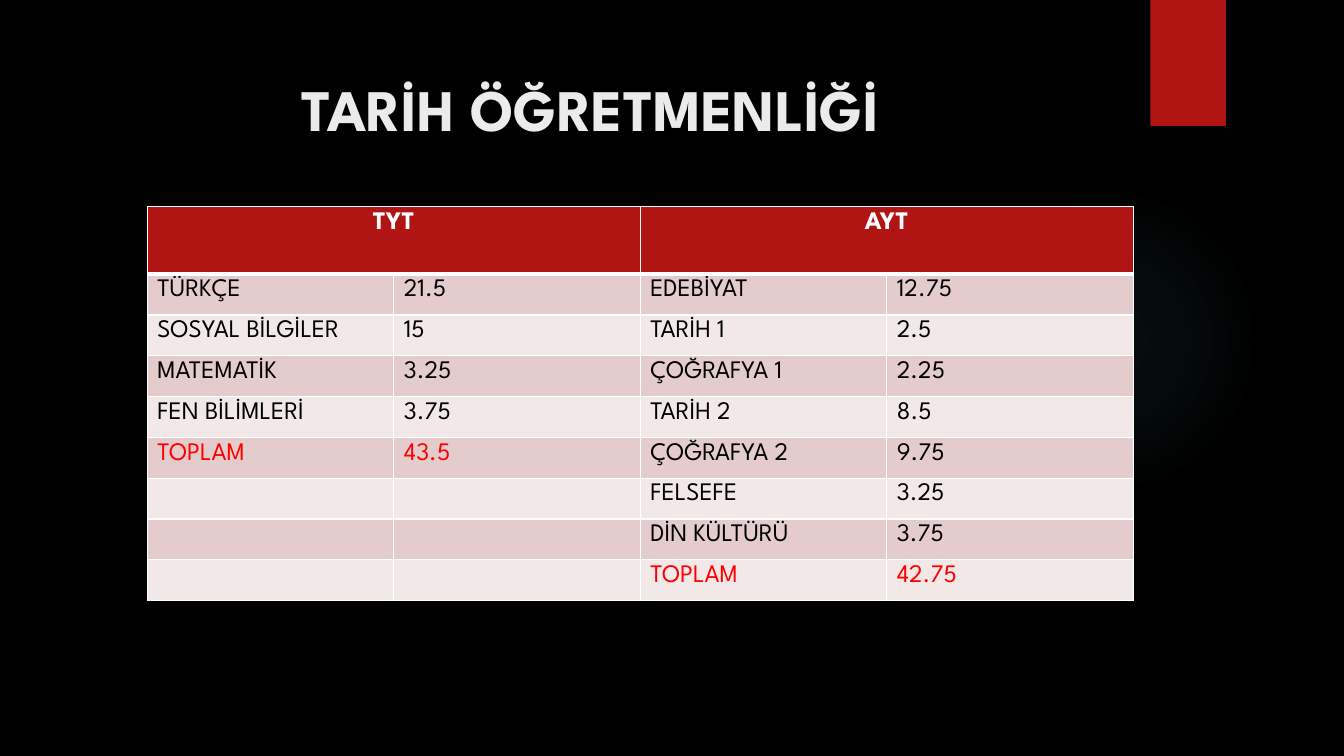
"""Build the history teaching slide with its TYT and AYT score table."""
from typing import NamedTuple

from lxml.etree import SubElement
from pptx import Presentation
from pptx.dml.color import RGBColor
from pptx.enum.shapes import MSO_SHAPE as Preset
from pptx.enum.text import MSO_ANCHOR as Anchor, PP_ALIGN as Align
from pptx.oxml import parse_xml
from pptx.oxml.ns import nsdecls, qn
from pptx.util import Inches, Pt

FONT = "League Spartan"
RED = "B01513"
BANDS = ("E4CCCC", "F2E8E7")
TABLE_HEIGHT, HEADER_HEIGHT = 3.91, 0.67


class Score(NamedTuple):
    subject: str
    net: str


class Exam(NamedTuple):
    name: str
    scores: list[Score]


EXAMS = [
    Exam("TYT", [
        Score("TÜRKÇE", "21.5"), Score("SOSYAL BİLGİLER", "15"),
        Score("MATEMATİK", "3.25"), Score("FEN BİLİMLERİ", "3.75"),
        Score("TOPLAM", "43.5"),
    ]),
    Exam("AYT", [
        Score("EDEBİYAT", "12.75"), Score("TARİH 1", "2.5"),
        Score("ÇOĞRAFYA 1", "2.25"), Score("TARİH 2", "8.5"),
        Score("ÇOĞRAFYA 2", "9.75"), Score("FELSEFE", "3.25"),
        Score("DİN KÜLTÜRÜ", "3.75"), Score("TOPLAM", "42.75"),
    ]),
]


def paint(fill, color: str) -> None:
    fill.solid()
    fill.fore_color.rgb = RGBColor.from_string(color)


def write(frame, text: str, size: int, color: str, bold=False, align=Align.LEFT) -> None:
    frame.text = text
    para = frame.paragraphs[0]
    para.alignment = align
    for span in para.runs:
        span.font.name = FONT
        span.font.size = Pt(size)
        span.font.bold = bold
        span.font.color.rgb = RGBColor.from_string(color)


def add_shape(page, preset, left: float, top: float, width: float, height: float):
    shape = page.shapes.add_shape(
        preset, Inches(left), Inches(top), Inches(width), Inches(height))
    shape.shadow.inherit = False
    shape.line.fill.background()
    return shape


def add_glow(page) -> None:
    glow = add_shape(page, Preset.OVAL, 9.41, 1.83, 3.08, 3.08)
    stops = "".join(
        f'<a:gs pos="{place * 1000}"><a:srgbClr val="50B9C1">'
        f'<a:alpha val="{alpha * 1000}"/></a:srgbClr></a:gs>'
        for place, alpha in ((0, 7), (36, 6), (69, 0)))
    gradient = parse_xml(
        f'<a:gradFill {nsdecls("a")}><a:gsLst>{stops}</a:gsLst><a:path path="circle">'
        '<a:fillToRect l="50000" t="50000" r="50000" b="50000"/></a:path></a:gradFill>')
    glow.element.spPr.find(qn("a:prstGeom")).addnext(gradient)


def add_title(page) -> None:
    title = page.shapes.title
    title.left, title.top = Inches(0.71), Inches(0.5)
    title.width, title.height = Inches(10.29), Inches(1.53)
    frame = title.text_frame
    frame.vertical_anchor = Anchor.TOP
    frame.margin_top = Inches(0.22)
    write(frame, "TARİH ÖĞRETMENLİĞİ", 42, "EBEBEB", True, Align.CENTER)
    title.element.getparent().append(title.element)


def style_cell(cell, fill: str, top: int = 1, bottom: int = 1) -> None:
    properties = cell._tc.get_or_add_tcPr()
    for side, width in (("L", 1), ("R", 1), ("T", top), ("B", bottom)):
        line = SubElement(properties, qn(f"a:ln{side}"), w=str(Pt(width)))
        color = SubElement(line, qn("a:solidFill"))
        SubElement(color, qn("a:srgbClr"), val="FFFFFF")
    paint(cell.fill, fill)


def add_scores(page) -> None:
    body_count = max(len(exam.scores) for exam in EXAMS)
    column_count = 2 * len(EXAMS)
    table = page.shapes.add_table(
        body_count + 1, column_count,
        Inches(1.46), Inches(2.05), Inches(9.78), Inches(TABLE_HEIGHT)).table
    for row in table.rows:
        row.height = Inches((TABLE_HEIGHT - HEADER_HEIGHT) / body_count)
    table.rows[0].height = Inches(HEADER_HEIGHT)
    for column in range(column_count):
        style_cell(table.cell(0, column), RED, bottom=3)
        for row in range(1, body_count + 1):
            style_cell(table.cell(row, column), BANDS[(row - 1) % 2],
                       top=3 if row == 1 else 1)
    for index, exam in enumerate(EXAMS):
        column = 2 * index
        header = table.cell(0, column)
        header.merge(table.cell(0, column + 1))
        write(header.text_frame, exam.name, 18, "FFFFFF", True, Align.CENTER)
        for row, score in enumerate(exam.scores, 1):
            color = "FF0000" if score.subject == "TOPLAM" else "000000"
            for offset, text in enumerate(score):
                write(table.cell(row, column + offset).text_frame, text, 18, color)


def main() -> None:
    deck = Presentation()
    deck.slide_width, deck.slide_height = Inches(13.33), Inches(7.5)
    page = deck.slides.add_slide(deck.slide_layouts[5])
    paint(page.background.fill, "000000")
    add_glow(page)
    ribbon = add_shape(page, Preset.RECTANGLE, 11.41, 0, 0.75, 1.25)
    paint(ribbon.fill, RED)
    add_title(page)
    add_scores(page)
    deck.save("out.pptx")


if __name__ == "__main__":
    main()
